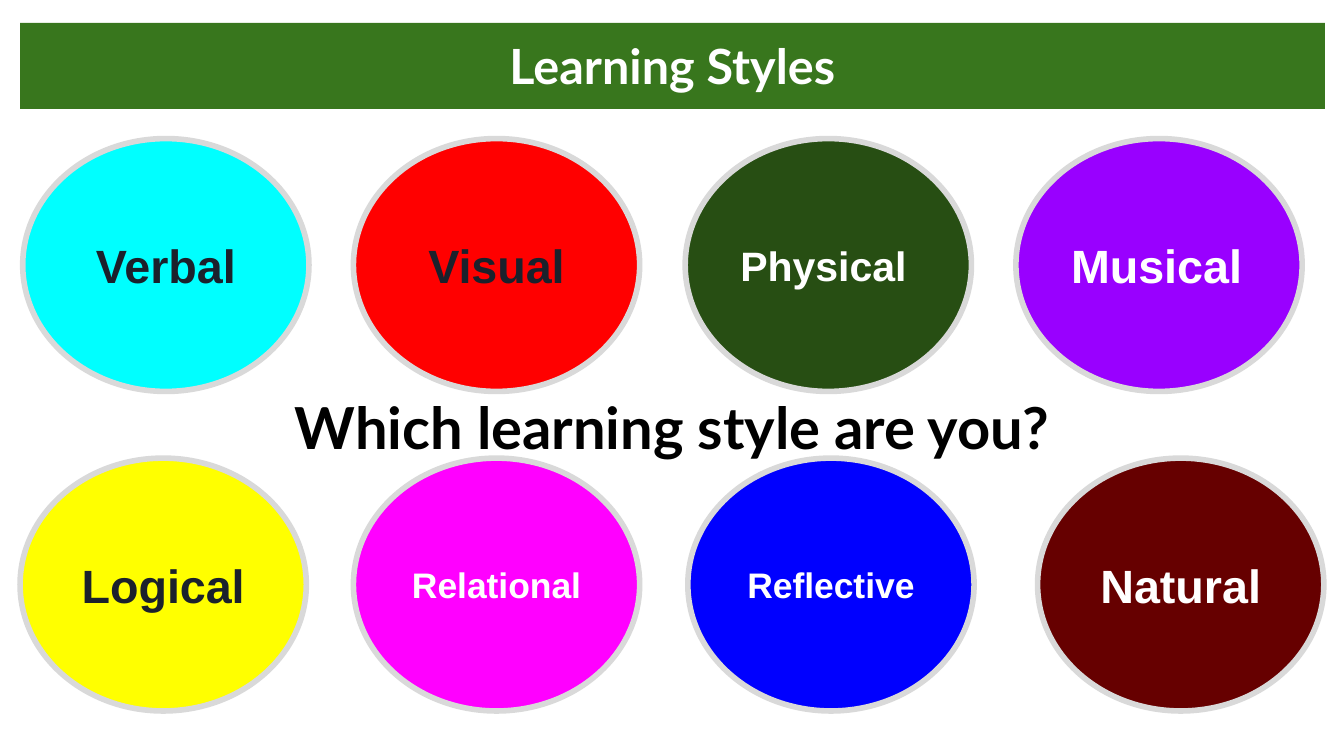
import pptx
import pptx.dml.color
import pptx.enum.shapes
import pptx.enum.text
import pptx.util

Cm = pptx.util.Cm
RGBColor = pptx.dml.color.RGBColor
ALIGN = pptx.enum.text.PP_ALIGN
ANCHOR = pptx.enum.text.MSO_ANCHOR

WHITE = RGBColor(0xFF, 0xFF, 0xFF)
BLACK = RGBColor(0x00, 0x00, 0x00)
INK = RGBColor(0x1B, 0x21, 0x2C)
OUTLINE = RGBColor(0xD9, 0xD9, 0xD9)
BANNER_GREEN = RGBColor(0x38, 0x76, 0x1D)
CYAN = RGBColor(0x00, 0xFF, 0xFF)
RED = RGBColor(0xFF, 0x00, 0x00)
FOREST = RGBColor(0x27, 0x4E, 0x13)
PURPLE = RGBColor(0x99, 0x00, 0xFF)
YELLOW = RGBColor(0xFF, 0xFF, 0x00)
MAGENTA = RGBColor(0xFF, 0x00, 0xFF)
BLUE = RGBColor(0x00, 0x00, 0xFF)
MAROON = RGBColor(0x66, 0x00, 0x00)


def write_text(box, text, font, size, color, anchor, align=ALIGN.CENTER):
    frame = box.text_frame
    frame_format = {
        "word_wrap": True,
        "auto_size": pptx.enum.text.MSO_AUTO_SIZE.NONE,
        "vertical_anchor": anchor,
        "margin_left": Cm(0.25),
        "margin_right": Cm(0.25),
        "margin_top": Cm(0.25),
        "margin_bottom": Cm(0.25),
    }
    for name, value in frame_format.items():
        setattr(frame, name, value)
    para = frame.paragraphs[0]
    para.alignment = align
    span = para.add_run()
    span.text = text
    for name, value in {"name": font, "size": pptx.util.Pt(size), "bold": True}.items():
        setattr(span.font, name, value)
    span.font.color.rgb = color


def fill_solid(target, color):
    target.fill.solid()
    target.fill.fore_color.rgb = color


deck = pptx.Presentation()
deck.slide_width = Cm(25.4)
deck.slide_height = Cm(14.29)
page = deck.slides.add_slide(deck.slide_layouts[5])
fill_solid(page.background, WHITE)

title = page.shapes.title
title_place = {"left": Cm(0.38), "top": Cm(0.43), "width": Cm(24.66), "height": Cm(1.63)}
for name, value in title_place.items():
    setattr(title, name, value)
fill_solid(title, BANNER_GREEN)
write_text(title, "Learning Styles", "Lato", 26, WHITE, ANCHOR.TOP)

style_rows = [
    (2.62, [
        (0.43, "Verbal", CYAN, INK, 25, ALIGN.CENTER),
        (6.68, "Visual", RED, INK, 25, ALIGN.CENTER),
        (12.95, "Physical", FOREST, WHITE, 22, ALIGN.LEFT),
        (19.2, "Musical", PURPLE, WHITE, 25, ALIGN.LEFT),
    ]),
    (8.66, [
        (0.38, "Logical", YELLOW, INK, 25, ALIGN.CENTER),
        (6.68, "Relational", MAGENTA, WHITE, 19, ALIGN.CENTER),
        (13, "Reflective", BLUE, WHITE, 19, ALIGN.CENTER),
        (19.61, "Natural", MAROON, WHITE, 25, ALIGN.CENTER),
    ]),
]
for top, styles in style_rows:
    for left, label, fill_color, text_color, size, align in styles:
        oval = page.shapes.add_shape(
            pptx.enum.shapes.MSO_SHAPE.OVAL, Cm(left), Cm(top), Cm(5.41), Cm(4.78))
        oval.shadow.inherit = False
        fill_solid(oval, fill_color)
        oval.line.color.rgb = OUTLINE
        oval.line.width = pptx.util.Pt(3)
        write_text(oval, label, "Arial", size, text_color, ANCHOR.MIDDLE, align)

question = page.shapes.add_textbox(Cm(0), Cm(7.16), Cm(25.4), Cm(1.83))
write_text(question, "Which learning style are you?", "Lato", 31, BLACK, ANCHOR.TOP)

deck.save("out.pptx")
